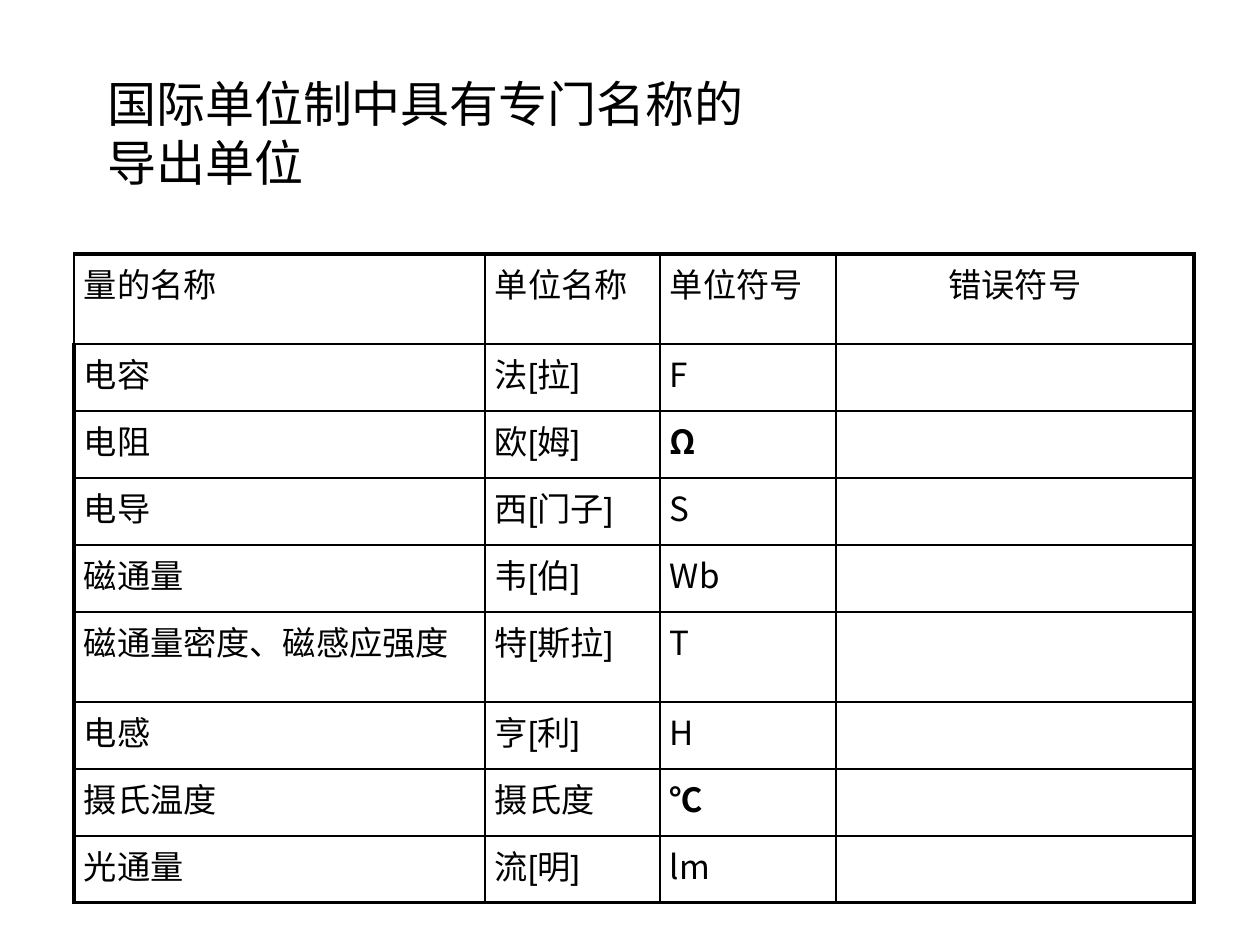
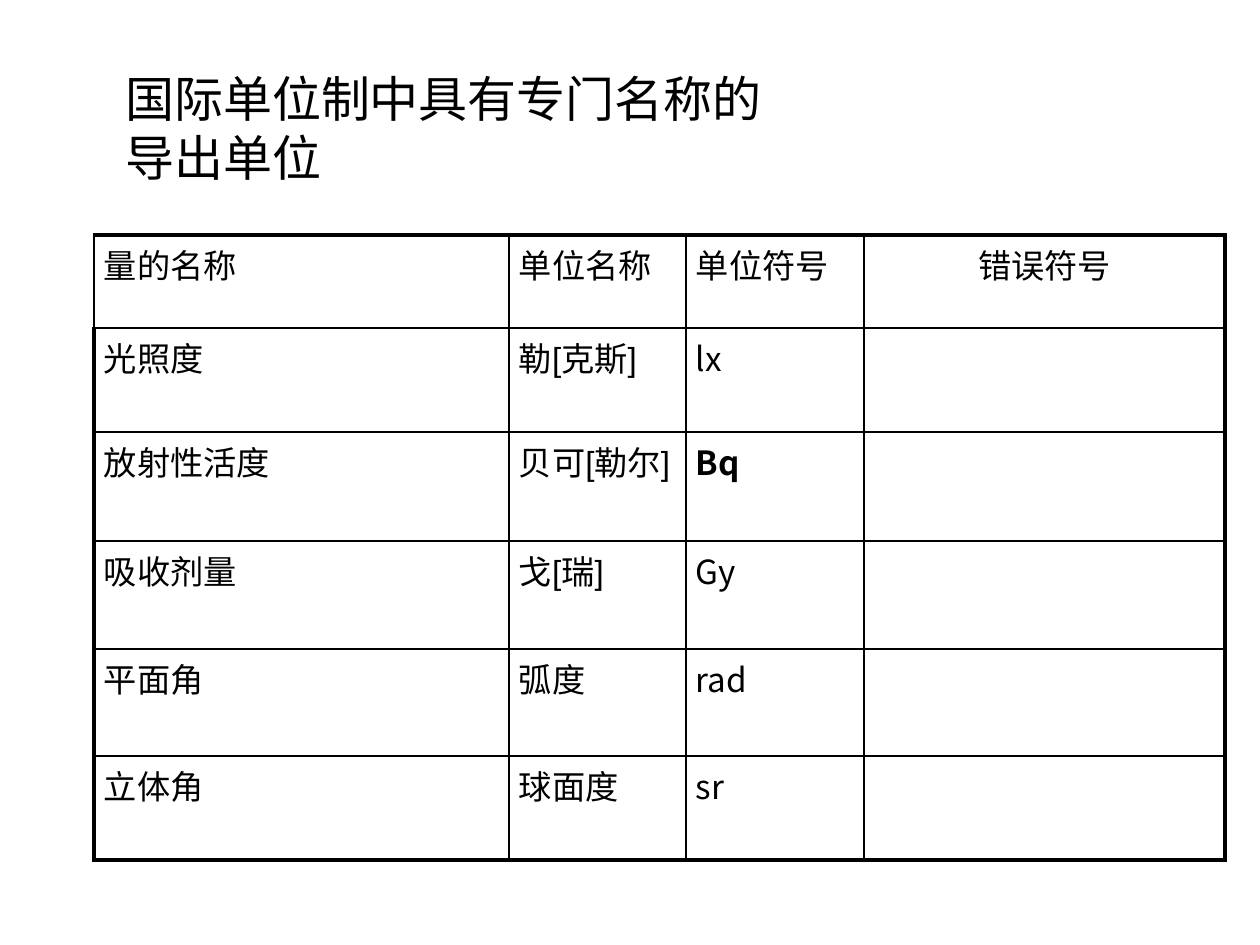
import pptx
import pptx.util
import pptx.dml.color
import pptx.enum.text
import pptx.oxml.ns
import lxml.etree

# Content
TITLE = "国际单位制中具有专门名称的\v导出单位"
HEADER = ("量的名称", "单位名称", "单位符号", "错误符号")
BOLD_SYMBOLS = {"Ω", "℃", "Bq"}
SLIDES = [
    {
        "title_box": (95, 22, 1032, 220),
        "table_at": (74, 254),
        "columns": (411, 175, 176, 358),
        "row_heights": (90, 67, 67, 67, 67, 90, 67, 67, 67),
        "units": [
            ("电容", "法[拉]", "F"),
            ("电阻", "欧[姆]", "Ω"),
            ("电导", "西[门子]", "S"),
            ("磁通量", "韦[伯]", "Wb"),
            ("磁通量密度、磁感应强度", "特[斯拉]", "T"),
            ("电感", "亨[利]", "H"),
            ("摄氏温度", "摄氏度", "℃"),
            ("光通量", "流[明]", "lm"),
        ],
    },
    {
        "title_box": (113, 17, 1072, 220),
        "table_at": (94, 235),
        "columns": (415, 177, 178, 361),
        "row_heights": (93, 104, 109, 108, 107, 104),
        "units": [
            ("光照度", "勒[克斯]", "lx"),
            ("放射性活度", "贝可[勒尔]", "Bq"),
            ("吸收剂量", "戈[瑞]", "Gy"),
            ("平面角", "弧度", "rad"),
            ("立体角", "球面度", "sr"),
        ],
    },
]

# Shared style
COLORS = {"text": "000000", "line": "000000"}
TEXT_FONT, SYMBOL_FONT = "Arial", "Noto Sans CJK SC"
TITLE_SIZE, CELL_SIZE = 28, 19
THIN, THICK = 1, 2.25
SYMBOL_COLUMN = 2


def px(n):
    return pptx.util.Inches(n / 126)


def style_runs(p, size, font=TEXT_FONT, bold=False):
    for r in p.runs:
        r.font.size = pptx.util.Pt(size)
        r.font.name = font
        r.font.bold = bold
        r.font.color.rgb = pptx.dml.color.RGBColor.from_string(COLORS["text"])
        ea = lxml.etree.SubElement(r.font._element, pptx.oxml.ns.qn("a:ea"))
        ea.set("typeface", SYMBOL_FONT)


def add_title(s, box):
    tf = s.shapes.add_textbox(*map(px, box)).text_frame
    tf.word_wrap = True
    tf.vertical_anchor = pptx.enum.text.MSO_ANCHOR.MIDDLE
    tf.text = TITLE
    style_runs(tf.paragraphs[0], TITLE_SIZE)


def set_borders(cell, widths):
    qn = pptx.oxml.ns.qn
    tcPr = cell._tc.get_or_add_tcPr()
    for side, width in widths.items():
        ln = lxml.etree.SubElement(tcPr, qn(f"a:ln{side}"), w=str(pptx.util.Pt(width)))
        fill = lxml.etree.SubElement(ln, qn("a:solidFill"))
        lxml.etree.SubElement(fill, qn("a:srgbClr"), val=COLORS["line"])


def add_unit_table(s, at, columns, row_heights, units):
    rows = [HEADER] + [unit + ("",) for unit in units]
    frame = s.shapes.add_table(len(rows), len(columns), *map(px, at),
                               px(sum(columns)), px(sum(row_heights)))
    table = frame.table
    table.first_row = table.horz_banding = False
    for column, width in zip(table.columns, columns):
        column.width = px(width)
    for row, height in zip(table.rows, row_heights):
        row.height = px(height)

    last_row, last_col = len(rows) - 1, len(columns) - 1
    for i, texts in enumerate(rows):
        for j, text in enumerate(texts):
            cell = table.cell(i, j)
            cell.margin_left = cell.margin_right = px(10)
            cell.margin_top = cell.margin_bottom = px(5)
            # Heavy outer frame, except beside the header
            set_borders(cell, {
                "L": THICK if j == 0 and i > 0 else THIN,
                "R": THICK if j == last_col else THIN,
                "T": THICK if i == 0 else THIN,
                "B": THICK if i == last_row else THIN,
            })
            cell.fill.background()
            if not text:
                continue
            cell.text_frame.text = text
            p = cell.text_frame.paragraphs[0]
            is_symbol = i > 0 and j == SYMBOL_COLUMN
            style_runs(p, CELL_SIZE, SYMBOL_FONT if is_symbol else TEXT_FONT,
                       text in BOLD_SYMBOLS)
            if j == last_col:
                p.alignment = pptx.enum.text.PP_ALIGN.CENTER


def main():
    prs = pptx.Presentation()
    prs.slide_width, prs.slide_height = px(1260), px(945)
    for spec_data in SLIDES:
        s = prs.slides.add_slide(prs.slide_layouts[6])
        add_title(s, spec_data["title_box"])
        add_unit_table(s, spec_data["table_at"], spec_data["columns"],
                       spec_data["row_heights"], spec_data["units"])
    prs.save("out.pptx")


if __name__ == "__main__":
    main()
